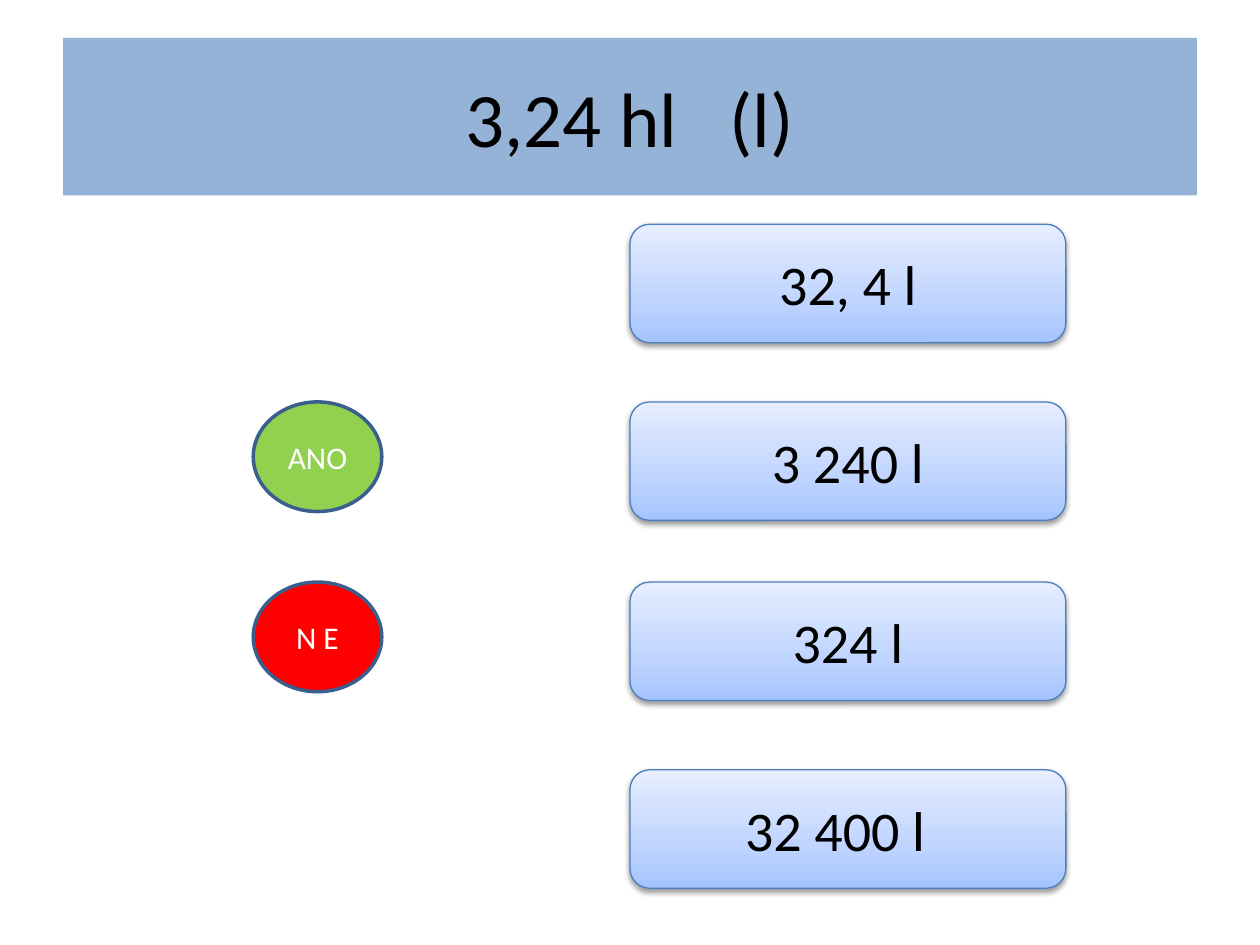
from lxml import etree
from pptx import Presentation
from pptx.dml.color import RGBColor
from pptx.enum.shapes import MSO_SHAPE
from pptx.enum.text import MSO_ANCHOR, PP_ALIGN
from pptx.oxml.ns import qn
from pptx.util import Inches, Pt

OVAL = MSO_SHAPE.OVAL
ROUNDED = MSO_SHAPE.ROUNDED_RECTANGLE
MIDDLE = MSO_ANCHOR.MIDDLE
CENTER = PP_ALIGN.CENTER

TITLE_ONLY = 5
FONT = "Calibri"
GRADIENT = [(0, "A4C4FF"), (35, "BFD4FF"), (100, "E6EEFF")]
ROW_TOPS = [1.78, 3.19, 4.62, 6.11]
ANSWERS = ["32, 4 l", "3 240 l", "324 l", "32 400 l"]
RIGHT_INSETS = [0.1, 0.1, 0.1, 0.3]
VERDICTS = [("ANO", "92D050"), ("N E", "FF0000")]


def color(hex_text):
    return RGBColor.from_string(hex_text)


def write_text(shape, text, size, hex_text="000000", right_inset=0.1):
    frame = shape.text_frame
    frame.word_wrap = True
    frame.vertical_anchor = MIDDLE
    frame.margin_right = Inches(right_inset)
    para = frame.paragraphs[0]
    para.alignment = CENTER
    span = para.add_run()
    span.text = text
    span.font.name = FONT
    span.font.size = Pt(size)
    span.font.color.rgb = color(hex_text)


def add_outlined_shape(page, kind, box, line_color, line_width):
    shape = page.shapes.add_shape(kind, *map(Inches, box))
    shape.shadow.inherit = False
    shape.line.color.rgb = color(line_color)
    shape.line.width = Pt(line_width)
    return shape


def add_color(parent, hex_text):
    return etree.SubElement(parent, qn("a:srgbClr"), val=hex_text)


def fill_gradient(shape):
    """Shade the shape from the first stop at the bottom to the last at the top."""
    shape.fill.gradient()
    shape.fill.gradient_angle = 90
    stops = shape._element.spPr.find(qn("a:gradFill")).find(qn("a:gsLst"))
    for stop in list(stops):
        stops.remove(stop)
    for position, hex_text in GRADIENT:
        stop = etree.SubElement(stops, qn("a:gs"), pos=str(position * 1000))
        add_color(stop, hex_text)


def drop_shadow(shape):
    effects = shape._element.spPr.find(qn("a:effectLst"))
    shadow = etree.SubElement(
        effects, qn("a:outerShdw"), blurRad=str(Pt(3.1)), dist=str(Pt(1.6)),
        dir="5400000", rotWithShape="0")
    etree.SubElement(add_color(shadow, "000000"), qn("a:alpha"), val="38000")


def place_title(page, box, text):
    title = page.shapes.title
    title.left, title.top, title.width, title.height = map(Inches, box)
    title.fill.solid()
    title.fill.fore_color.rgb = color("95B3D7")
    write_text(title, text, size=44)


def add_verdict(page, box, text, fill_color):
    oval = add_outlined_shape(page, OVAL, box, "3A5F8C", 2)
    oval.fill.solid()
    oval.fill.fore_color.rgb = color(fill_color)
    write_text(oval, text, size=18, hex_text="FFFFFF")


def add_answer(page, box, text, right_inset):
    button = add_outlined_shape(page, ROUNDED, box, "4B7EBC", 0.75)
    fill_gradient(button)
    drop_shadow(button)
    write_text(button, text, size=32, right_inset=right_inset)


def main():
    deck = Presentation()
    deck.slide_width, deck.slide_height = Inches(10), Inches(7.5)
    page = deck.slides.add_slide(deck.slide_layouts[TITLE_ONLY])
    place_title(page, (0.5, 0.3, 9, 1.25), "3,24 hl   (l)")
    for top, (text, fill_color) in zip(ROW_TOPS[1:], VERDICTS):
        add_verdict(page, (2.01, top, 1.02, 0.87), text, fill_color)
    for top, text, right_inset in zip(ROW_TOPS, ANSWERS, RIGHT_INSETS):
        add_answer(page, (5, top, 3.46, 0.94), text, right_inset)
    deck.save("out.pptx")


if __name__ == "__main__":
    main()
